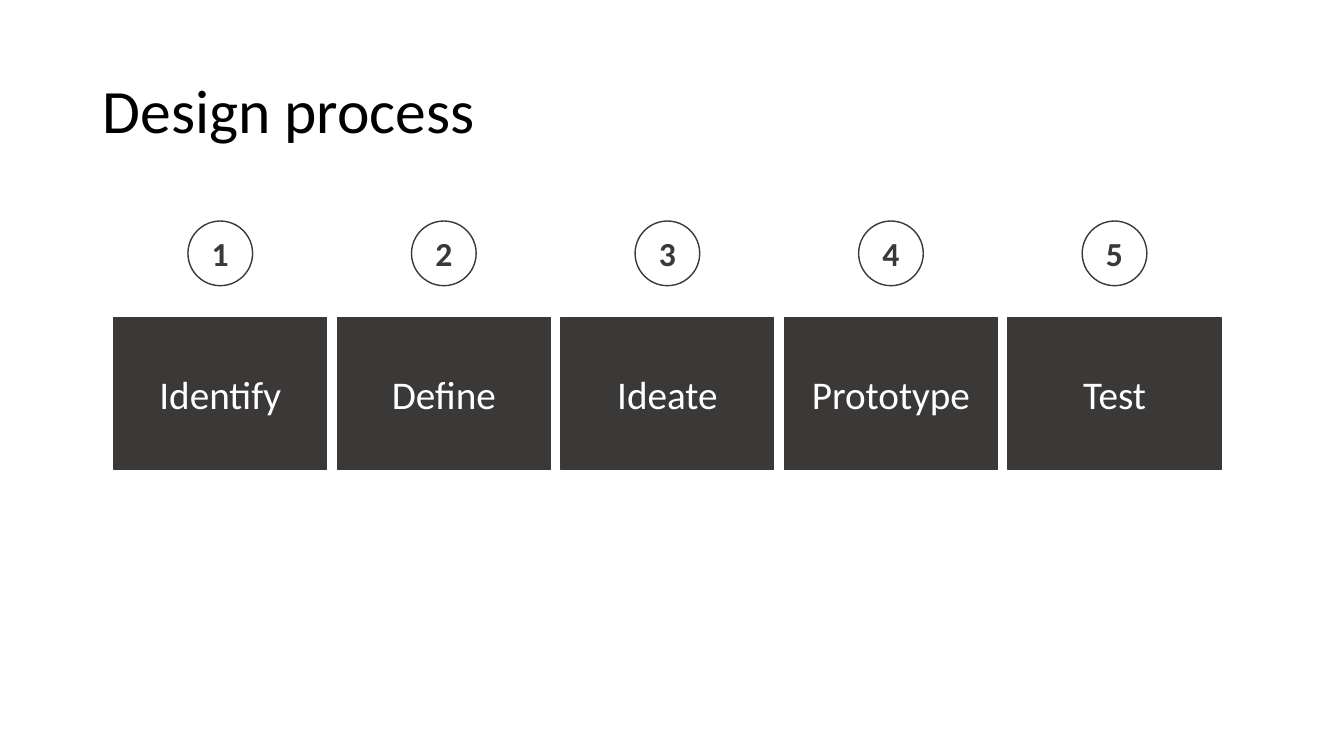
from pptx import Presentation
from pptx.dml.color import RGBColor
from pptx.enum.shapes import MSO_SHAPE as SHAPE
from pptx.enum.text import MSO_ANCHOR as ANCHOR, PP_ALIGN as ALIGN
from pptx.util import Cm, Pt

DARK = "3B3838"
WHITE = "FFFFFF"
STEPS = ["Identify", "Define", "Ideate", "Prototype", "Test"]


def rgb(color):
    return RGBColor.from_string(color)


def write(sp, text, size=28, color=WHITE, bold=False, align=ALIGN.CENTER, spacing=1.0):
    tf = sp.text_frame
    tf.word_wrap = True
    tf.vertical_anchor = ANCHOR.MIDDLE
    p = tf.paragraphs[0]
    p.alignment = align
    p.line_spacing = spacing
    r = p.add_run()
    r.text = text
    r.font.name = "Calibri"
    r.font.size = Pt(size)
    r.font.bold = bold
    r.font.color.rgb = rgb(color)


def add_shape(s, kind, x, y, w, h, fill):
    sp = s.shapes.add_shape(kind, Cm(x), Cm(y), Cm(w), Cm(h))
    sp.shadow.inherit = False
    sp.fill.solid()
    sp.fill.fore_color.rgb = rgb(fill)
    sp.line.color.rgb = rgb(DARK)
    sp.line.width = Pt(1)
    return sp


def add_title(s, text, x, y, w, h):
    sp = s.shapes.title
    sp.left, sp.top, sp.width, sp.height = Cm(x), Cm(y), Cm(w), Cm(h)
    write(sp, text, size=44, color="000000", align=ALIGN.LEFT, spacing=0.9)


def add_process(s, steps, x, y, w, h, gap=0.27, box_h=3.84, badge=1.63):
    box_w = (w - gap * (len(steps) - 1)) / len(steps)
    lefts = [x + i * (box_w + gap) for i in range(len(steps))]
    for left, step in zip(lefts, steps):
        sp = add_shape(s, SHAPE.RECTANGLE, left, y + h - box_h, box_w, box_h, DARK)
        write(sp, step)
    for number, left in enumerate(lefts, 1):
        badge_x = left + (box_w - badge) / 2
        sp = add_shape(s, SHAPE.OVAL, badge_x, y, badge, badge, WHITE)
        write(sp, str(number), size=24, color=DARK, bold=True)


def main():
    prs = Presentation()
    prs.slide_width, prs.slide_height = Cm(33.87), Cm(19.05)
    s = prs.slides.add_slide(prs.slide_layouts[5])
    add_title(s, "Design process", 2.33, 1.02, 29.21, 3.68)
    add_process(s, STEPS, 2.87, 5.57, 27.9, 6.27)
    prs.save("out.pptx")


if __name__ == "__main__":
    main()
